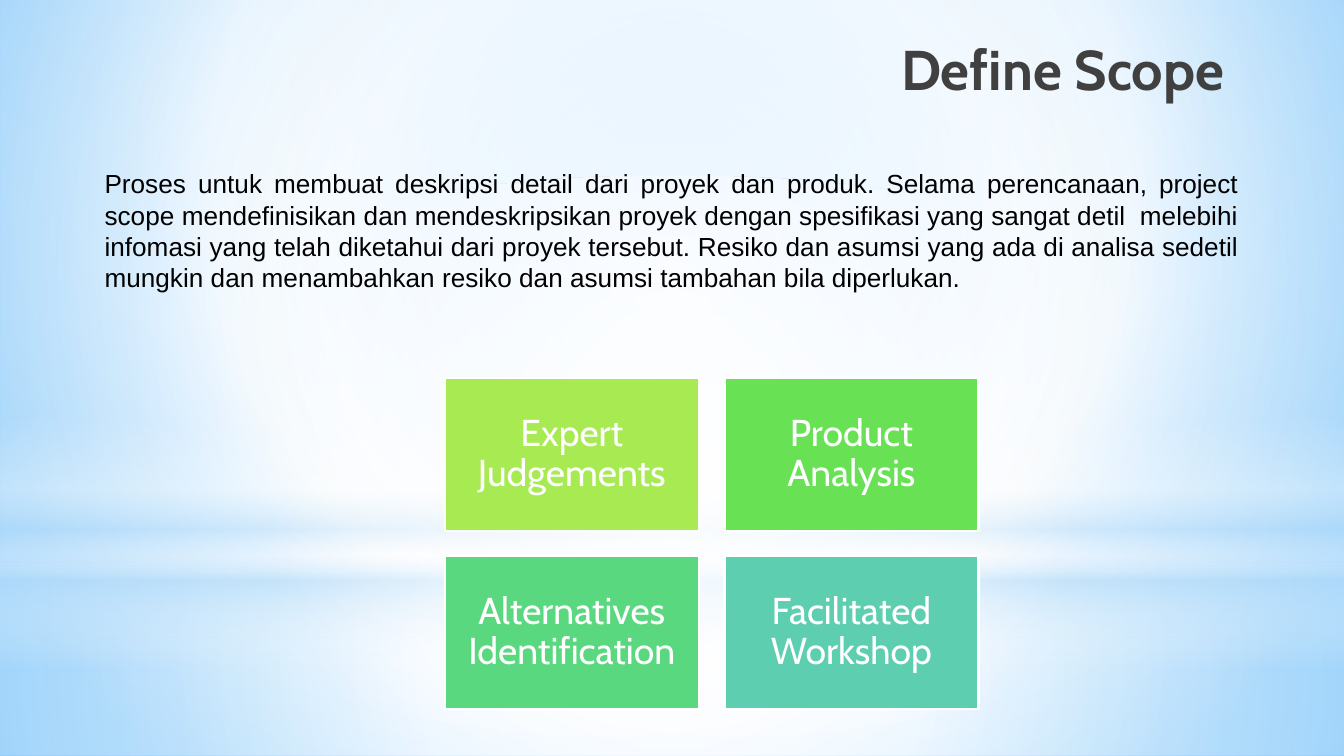
from pptx import Presentation
from pptx.dml.color import RGBColor
from pptx.enum.shapes import MSO_SHAPE
from pptx.enum.text import MSO_ANCHOR, MSO_AUTO_SIZE, PP_ALIGN
from pptx.oxml import parse_xml
from pptx.oxml.ns import nsdecls, qn
from pptx.util import Inches, Pt

RECT, OVAL = MSO_SHAPE.RECTANGLE, MSO_SHAPE.OVAL
MID, RIGHT, JUST = PP_ALIGN.CENTER, PP_ALIGN.RIGHT, PP_ALIGN.JUSTIFY
TOP, CENTER, BOTTOM = MSO_ANCHOR.TOP, MSO_ANCHOR.MIDDLE, MSO_ANCHOR.BOTTOM
FIXED = MSO_AUTO_SIZE.NONE

WIDE = Inches(10)
HIGH = WIDE * 9 // 16
HEX = {
    "white": "FFFFFF", "black": "000000", "title": "404040",
    "sky": "9ED5FF", "blue": "5BB9FF", "pale": "B4DCFA",
    "lime": "A7EA52", "green": "68E155", "mint": "59D87F", "teal": "5DCEAF",
}
HEAD = "Define Scope"
BODY = (
    "Proses untuk membuat deskripsi detail dari proyek dan produk. "
    "Selama perencanaan, project scope mendefinisikan dan mendeskripsikan "
    "proyek dengan spesifikasi yang sangat detil  melebihi infomasi yang "
    "telah diketahui dari proyek tersebut. Resiko dan asumsi yang ada di "
    "analisa sedetil mungkin dan menambahkan resiko dan asumsi tambahan "
    "bila diperlukan."
)
TILES = [
    ("Expert Judgements", "lime"), ("Product Analysis", "green"),
    ("Alternatives Identification", "mint"), ("Facilitated Workshop", "teal"),
]
ROUND = (50, 50, 50, 50)
WAVES = [
    (RECT, (0, 74.5, 100, 25.5), ROUND,
     [(0, "white", 91), (37, "white", 76), (100, "pale", 79)]),
    (RECT, (0, 0, 100, 74.5), ROUND,
     [(0, "white", 89), (48, "white", 62), (100, "pale", 79)]),
    (RECT, (0, 55, 100, 33.4), None,
     [(0, "white", 0), (29, "white", 30), (45, "pale", 40),
      (55, "white", 26), (65, "pale", 60), (100, "white", 0)]),
    (OVAL, (0, 23.3, 100, 74.5), ROUND,
     [(0, "white", 100), (56, "white", 0)]),
]


def area(x, y, w, h):
    """Turn percentages of the slide into a box of lengths."""
    return [int(n * side / 100) for n, side in zip((x, y, w, h), (WIDE, HIGH) * 2)]


def color(name):
    """Look up a named colour."""
    return RGBColor.from_string(HEX[name])


def blend(fill, root, stops, focus):
    """Give a fill inside the root element a radial or vertical gradient."""
    fill.background()
    marks = "".join(
        f'<a:gs pos="{pos * 1000}"><a:srgbClr val="{HEX[name]}">'
        f'<a:alpha val="{alpha * 1000}"/></a:srgbClr></a:gs>'
        for pos, name, alpha in stops
    )
    mode = '<a:lin ang="5400000" scaled="0"/>'
    if focus:
        l, t, r, b = (n * 1000 for n in focus)
        mode = (f'<a:path path="circle"><a:fillToRect l="{l}" t="{t}" '
                f'r="{r}" b="{b}"/></a:path>')
    grad = parse_xml(f'<a:gradFill {nsdecls("a")} rotWithShape="1">'
                     f'<a:gsLst>{marks}</a:gsLst>{mode}</a:gradFill>')
    blank = next(root.iter(qn("a:noFill")))
    blank.getparent().replace(blank, grad)


def write(shape, text, font, size, name, align, anchor, inset):
    """Set the text of a shape and format it."""
    frame = shape.text_frame
    frame.text = text
    frame.word_wrap = True
    frame.auto_size = FIXED
    frame.vertical_anchor = anchor
    frame.margin_left = frame.margin_right = Inches(inset[0])
    frame.margin_top = frame.margin_bottom = Inches(inset[1])
    para = frame.paragraphs[0]
    para.alignment = align
    face = para.runs[0].font
    face.name, face.size = font, Pt(size)
    face.color.rgb = color(name)
    return para


def block(slide, kind, box):
    """Add a preset shape without a shadow."""
    shape = slide.shapes.add_shape(kind, *box)
    shape.shadow.inherit = False
    return shape


def scene(slide):
    """Paint the sky and the light waves over it."""
    blend(slide.background.fill, slide.element,
          [(0, "sky", 100), (60, "white", 100), (100, "blue", 100)],
          (20, 10, 20, 60))
    for kind, box, focus, stops in WAVES:
        wave = block(slide, kind, area(*box))
        blend(wave.fill, wave.element, stops, focus)
        wave.line.fill.background()


def header(slide, box):
    """Place the title in front of the scene."""
    title = slide.shapes.title
    title.left, title.top, title.width, title.height = box
    para = write(title, HEAD, "Cabin", 30, "title", RIGHT, BOTTOM, (0.1, 0.1))
    para.runs[0].font.bold = True
    tree = title.element.getparent()
    tree.append(title.element)


def story(slide, box):
    """Place the justified paragraph."""
    text = slide.shapes.add_textbox(*box)
    write(text, BODY, "Arial", 14, "black", JUST, TOP, (0.1, 0.05))


def grid(slide, box, cols=2):
    """Lay the tiles out in equal columns and rows."""
    x, y, w, h = box
    gap = int(WIDE * 0.019)
    rows = len(TILES) // cols
    wide = (w - gap * (cols - 1)) // cols
    high = (h - gap * (rows - 1)) // rows
    for i, (label, name) in enumerate(TILES):
        row, col = divmod(i, cols)
        spot = (x + col * (wide + gap), y + row * (high + gap), wide, high)
        tile = block(slide, RECT, spot)
        tile.fill.solid()
        tile.fill.fore_color.rgb = color(name)
        tile.line.color.rgb = color("white")
        tile.line.width = Pt(1.25)
        para = write(tile, label, "Cabin", 20, "white", MID, CENTER, (0.08, 0.08))
        para.line_spacing = 0.9


def main():
    """Build the slide and save it."""
    deck = Presentation()
    deck.slide_width, deck.slide_height = WIDE, HIGH
    slide = deck.slides.add_slide(deck.slide_layouts[5])
    scene(slide)
    header(slide, area(3.6, 4.1, 88.5, 11.2))
    story(slide, area(6.8, 21.3, 86.4, 22.8))
    grid(slide, area(33.1, 50, 39.7, 43.8))
    deck.save("out.pptx")


if __name__ == "__main__":
    main()
